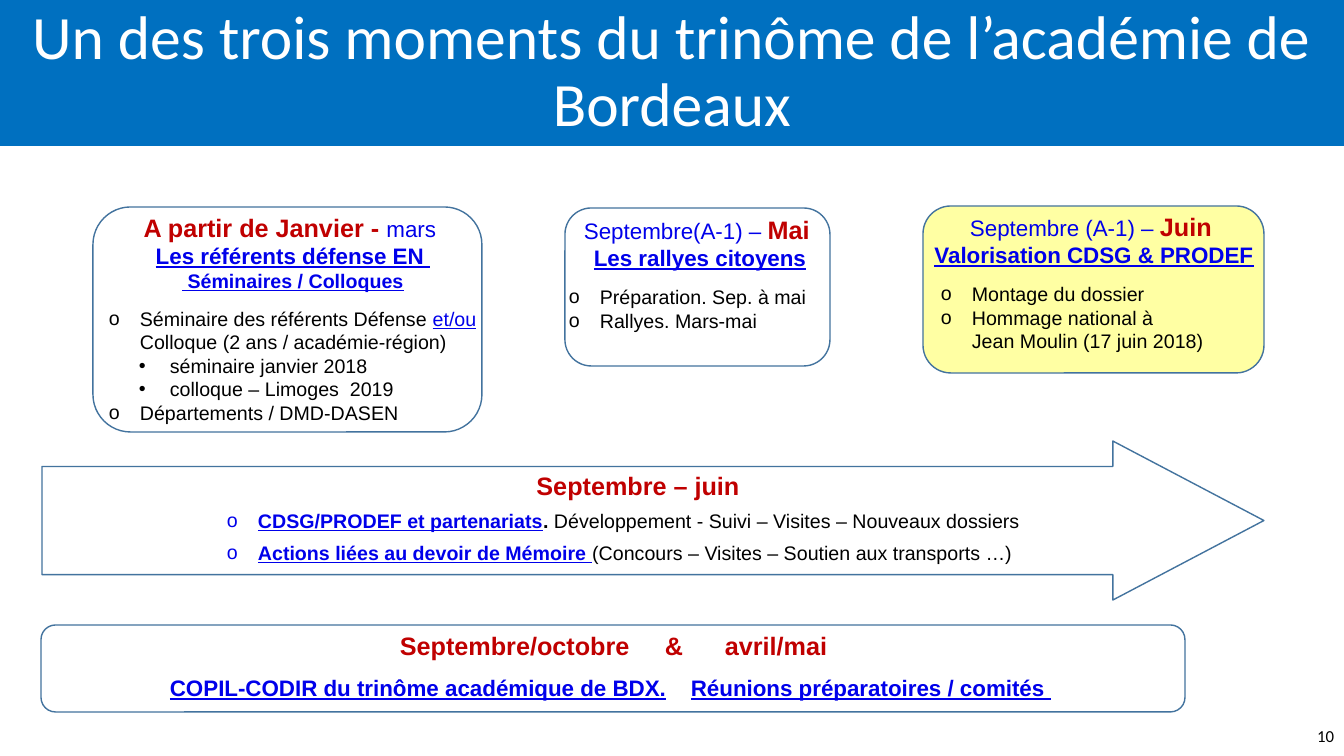
from lxml.etree import SubElement as Sub
from pptx import Presentation
from pptx.dml.color import RGBColor as RGB
from pptx.enum.shapes import MSO_SHAPE as Kind
from pptx.enum.text import MSO_ANCHOR as Anchor, PP_ALIGN as Align
from pptx.oxml.ns import qn
from pptx.util import Pt

PX = 914400 / 100.8
WIDE, HIGH = 1344, 756
HANG = 31
WHITE, BLACK = RGB(255, 255, 255), RGB(0, 0, 0)
BLUE, RED = RGB(0, 0, 0xEA), RGB(0xC0, 0, 0)
BAND, EDGE = RGB(0, 0x70, 0xC0), RGB(0x43, 0x73, 0x9E)
CREAM = RGB(0xFF, 0xFF, 0xA3)


# A run is (text, size, colour, style): b is bold, u is underlined.
def big(text):
    return (text, 18, RED, "b")


def head(text):
    return (text, 16, BLUE, "")


def link(text, size=16):
    return (text, size, BLUE, "bu")


def body(text):
    return (text, 14, BLACK, "")


# A line is a dict of its runs and whatever differs from plain left text.
def mid(*runs):
    return dict(runs=runs, align=Align.CENTER)


def item(indent, *runs, mark="o", gap=0):
    return dict(runs=runs, indent=indent, mark=mark, gap=gap)


TITLE = "Un des trois moments du trinôme de l’académie de Bordeaux"
CARDS = [
    dict(box=(93, 207, 389, 225), fill=None, text=(41, 207, 504, 224), lines=[
        mid(big("A partir de Janvier - "), head("mars ")),
        mid(link("Les référents défense EN ")),
        mid(link(" Séminaires / Colloques", 14)),
        item(89, body("Séminaire des référents Défense "),
             ("et/ou", 14, BLUE, "u"),
             body(" \nColloque (2 ans / académie-région)"), gap=10),
        item(119, body("séminaire janvier 2018"), mark="•"),
        item(119, body("colloque – Limoges  2019"), mark="•"),
        item(89, body("Départements / DMD-DASEN")),
    ]),
    dict(box=(565, 208, 265, 158), fill=None, text=(462, 209, 476, 158), lines=[
        mid(head("Septembre(A-1) – "), big("Mai"), head(" ")),
        mid(link("Les rallyes citoyens")),
        item(128, body("Préparation. Sep. à mai"), gap=10),
        item(128, body("Rallyes. Mars-mai")),
    ]),
    dict(box=(923, 206, 341, 167), fill=CREAM, text=(854, 206, 480, 160), lines=[
        mid(head("Septembre (A-1) – "), big("Juin"), head(" ")),
        mid(link("Valorisation CDSG & PRODEF")),
        item(108, body("Montage du dossier"), gap=10),
        item(108, body("Hommage national à \nJean Moulin (17 juin 2018)")),
    ]),
]
YEAR = [
    mid(big("Septembre – juin")),
    item(HANG, link("CDSG/PRODEF et partenariats", 14), (". ", 14, BLACK, "b"),
         body("Développement - Suivi – Visites – Nouveaux dossiers"), gap=6),
    item(HANG, link("Actions liées au devoir de Mémoire ", 14),
         body("(Concours – Visites – Soutien aux transports …)"), gap=6),
]
BOARD = [
    dict(runs=[big("\tSeptembre/octobre\t&\tavril/mai")], tabs=(230, 495, 555)),
    dict(runs=[link("COPIL-CODIR du trinôme académique de BDX.\t"
                    "Réunions préparatoires / comités ")],
         tabs=(521,), gap=10),
]


def emu(px):
    return round(px * PX)


def add_run(para, text, size, color, style, face):
    """Add one run, with a line break at each newline."""
    for i, part in enumerate(text.split("\n")):
        if i:
            para.add_line_break()
        run = para.add_run()
        run.text = part
        font = run.font
        font.name, font.size = face, Pt(size)
        font.bold, font.underline = "b" in style, "u" in style
        font.color.rgb = color


def set_list(para, indent, mark, tabs):
    """Set the hanging indent, bullet and tab stops of a paragraph."""
    props = para._p.get_or_add_pPr()
    if mark:
        props.set("marL", str(emu(indent)))
        props.set("indent", str(-emu(HANG)))
        Sub(props, qn("a:buFont"), typeface="Arial")
        Sub(props, qn("a:buChar"), char=mark)
    if tabs:
        stops = Sub(props, qn("a:tabLst"))
        for tab in tabs:
            Sub(stops, qn("a:tab"), pos=str(emu(tab)), algn="l")


def write(frame, lines, face="Arial", anchor=Anchor.TOP):
    frame.word_wrap = True
    frame.vertical_anchor = anchor
    for i, line in enumerate(lines):
        para = frame.paragraphs[0] if i == 0 else frame.add_paragraph()
        para.alignment = line.get("align", Align.LEFT)
        para.space_before = Pt(line.get("gap", 0))
        para.line_spacing = line.get("pitch", 1.0)
        set_list(para, line.get("indent", 0), line.get("mark"), line.get("tabs"))
        for run in line["runs"]:
            add_run(para, *run, face)


def add_text(slide, box, lines, **look):
    area = slide.shapes.add_textbox(*map(emu, box))
    write(area.text_frame, lines, **look)


def add_form(slide, kind, box, fill=None, edge=EDGE):
    form = slide.shapes.add_shape(kind, *map(emu, box))
    form.shadow.inherit = False
    if fill is None:
        form.fill.background()
    else:
        form.fill.solid()
        form.fill.fore_color.rgb = fill
    if edge is None:
        form.line.fill.background()
    else:
        form.line.color.rgb = edge
        form.line.width = Pt(1)
    return form


def main():
    deck = Presentation()
    deck.slide_width, deck.slide_height = emu(WIDE), emu(HIGH)
    slide = deck.slides.add_slide(deck.slide_layouts[6])

    band = add_form(slide, Kind.RECTANGLE, (0, 0, WIDE, 146), BAND, None)
    title = dict(runs=[(TITLE, 44, WHITE, "")], align=Align.CENTER, pitch=0.9)
    write(band.text_frame, [title], face="Calibri", anchor=Anchor.MIDDLE)

    for card in CARDS:
        add_form(slide, Kind.ROUNDED_RECTANGLE, card["box"], card["fill"])
        add_text(slide, card["text"], card["lines"])

    arrow = add_form(slide, Kind.RIGHT_ARROW, (42, 441, 1222, 159))
    arrow.adjustments[0], arrow.adjustments[1] = 0.68, 0.95
    add_text(slide, (217, 465, 842, 105), YEAR)

    add_form(slide, Kind.ROUNDED_RECTANGLE, (41, 625, 1144, 87))
    add_text(slide, (160, 625, 960, 87), BOARD)

    number = dict(runs=[("10", 12, BLACK, "")], align=Align.RIGHT)
    add_text(slide, (1041, 716, 303, 40), [number],
             face="Calibri", anchor=Anchor.MIDDLE)
    deck.save("out.pptx")


if __name__ == "__main__":
    main()
